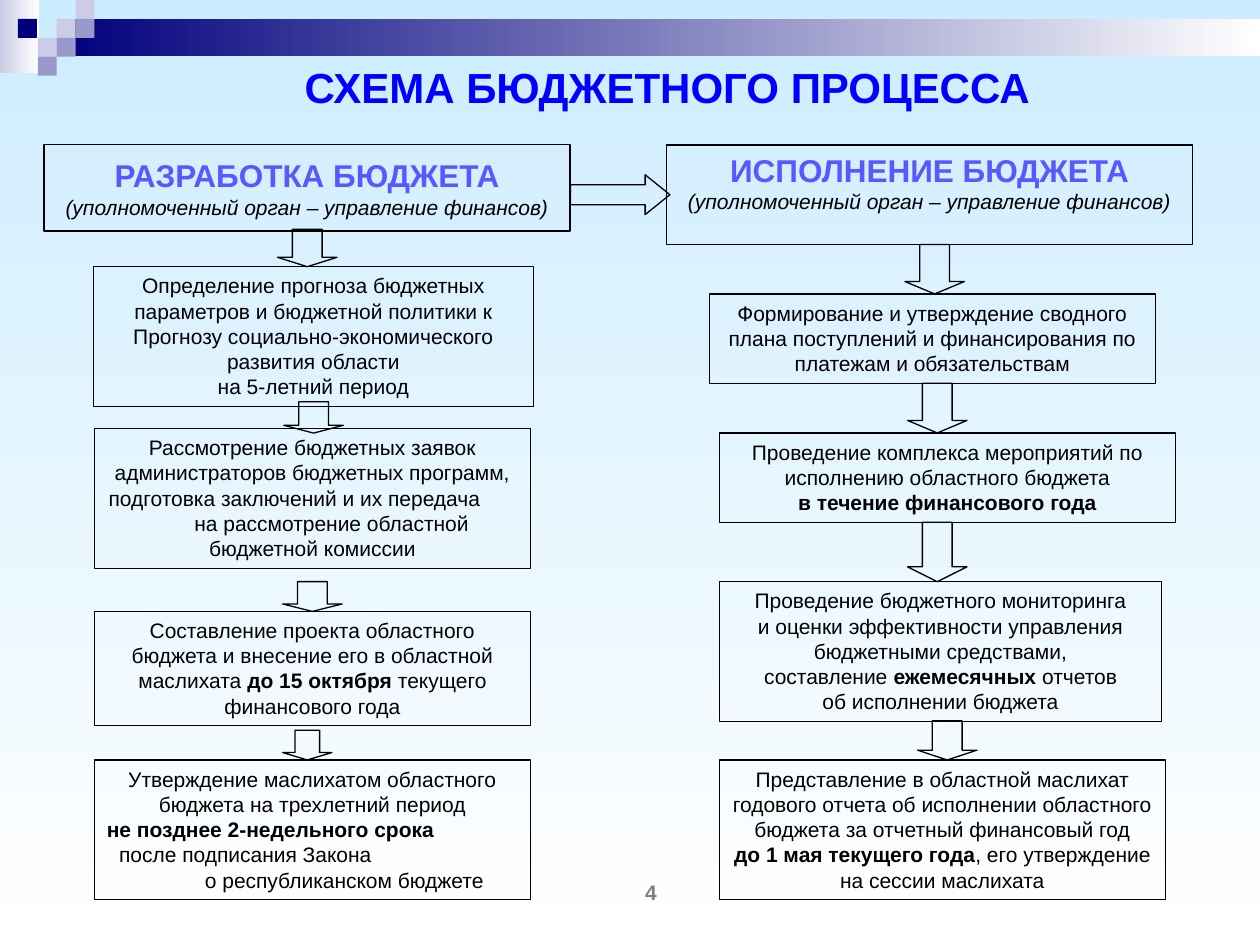
"""Build the budget process flowchart slide."""
from pptx import Presentation
from pptx.dml.color import RGBColor
from pptx.enum.shapes import MSO_SHAPE
from pptx.enum.text import MSO_ANCHOR, PP_ALIGN
from pptx.util import Pt

COLORS = {
    "sky": "CCECFF", "white": "FFFFFF", "navy": "00007D", "lilac": "CCCCE6",
    "violet": "9999CC", "title": "0000FF", "header": "5858FF",
    "black": "000000", "gray": "7F7F7F",
}
UNIT = 10.8

prs = Presentation()
prs.slide_width, prs.slide_height = Pt(720), Pt(540)
s = prs.slides.add_slide(prs.slide_layouts[6])


def add_shape(kind, box, fill=None, line=None):
    sp = s.shapes.add_shape(kind, *[Pt(v) for v in box])
    sp.shadow.inherit = False
    if fill:
        sp.fill.solid()
        sp.fill.fore_color.rgb = RGBColor.from_string(COLORS[fill])
    else:
        sp.fill.background()
    if line:
        sp.line.color.rgb = RGBColor.from_string(COLORS[line])
        sp.line.width = Pt(0.75)
    else:
        sp.line.fill.background()
    return sp


def add_run(p, text, size=12, color="black", bold=False, italic=False):
    r = p.add_run()
    r.text = text
    r.font.name = "Arial"
    r.font.size = Pt(size)
    r.font.bold = bold
    r.font.italic = italic
    r.font.color.rgb = RGBColor.from_string(COLORS[color])


bg = s.background.fill
bars = [
    ((0, 0, 22.3, 41.8), "lilac"),
    ((32.4, UNIT, 687.6, 21.4), "navy"),
]
gradients = [(bg, "sky", 270)]
for box, color in bars:
    gradients.append((add_shape(MSO_SHAPE.RECTANGLE, box, "white").fill, color, 0))
for fill, color, angle in gradients:
    fill.gradient()
    fill.gradient_angle = angle
    for stop, name in zip(fill.gradient_stops, (color, "white")):
        stop.color.rgb = RGBColor.from_string(COLORS[name])

squares = [
    (3, 1, "lilac"), (4, 0, "lilac"), (4, 1, "violet"), (2, 2, "lilac"),
    (0.95, 1, "navy"), (3, 2, "violet"), (2, 3, "violet"),
]
for col, row, color in squares:
    add_shape(MSO_SHAPE.RECTANGLE, (col * UNIT, row * UNIT, UNIT, UNIT), color)

labels = [
    ((99.4, 31.7, 563.8, 36), "СХЕМА БЮДЖЕТНОГО ПРОЦЕССА", 24, "title"),
    ((300, 492, 144, 36), "4", 12, "gray"),
]
for box, text, size, color in labels:
    tf = s.shapes.add_textbox(*[Pt(v) for v in box]).text_frame
    tf.word_wrap = True
    tf.vertical_anchor = MSO_ANCHOR.MIDDLE
    p = tf.paragraphs[0]
    p.alignment = PP_ALIGN.CENTER
    add_run(p, text, size, color, bold=True)

headers = [
    ((25.2, 82.8, 300.6, 49.2), "РАЗРАБОТКА БЮДЖЕТА", 0),
    ((380.9, 82.8, 300.6, 56.9), "ИСПОЛНЕНИЕ БЮДЖЕТА", 13.8),
]
for box, text, bottom in headers:
    tf = add_shape(MSO_SHAPE.RECTANGLE, box, line="black").text_frame
    tf.word_wrap = False
    tf.vertical_anchor = MSO_ANCHOR.MIDDLE
    tf.margin_left = tf.margin_right = tf.margin_top = 0
    tf.margin_bottom = Pt(bottom)
    p = tf.paragraphs[0]
    p.alignment = PP_ALIGN.CENTER
    add_run(p, text, 18, "header", bold=True)
    p = tf.add_paragraph()
    p.alignment = PP_ALIGN.CENTER
    add_run(p, "(уполномоченный орган – управление финансов)", italic=True)

CENTERED = None
steps = [
    ((53.4, 152.4, 251.4, 79.9), [
        (CENTERED, "Определение прогноза бюджетных параметров и бюджетной политики к "
                   "Прогнозу социально-экономического развития области"),
        (CENTERED, "на 5-летний период")]),
    ((54, 244.9, 249.1, 79.9), [
        (CENTERED, "Рассмотрение бюджетных заявок администраторов бюджетных программ,"),
        (1, "подготовка заключений и их передача"),
        (50, "на рассмотрение областной"),
        (CENTERED, "бюджетной комиссии")]),
    ((54, 349.4, 249.1, 65.2), [
        (CENTERED, "Составление проекта областного бюджета и внесение его в областной "
                   "маслихата *до 15 октября *текущего финансового года")]),
    ((54, 434.3, 249.1, 79.9), [
        (CENTERED, "Утверждение маслихатом областного бюджета на трехлетний период"),
        (0, "*не позднее 2-недельного срока"),
        (7, "после подписания Закона"),
        (56, "о республиканском бюджете")]),
    ((405.4, 168, 254.9, 51.1), [
        (CENTERED, "Формирование и утверждение сводного плана поступлений и "
                   "финансирования по платежам и обязательствам")]),
    ((411.1, 247.5, 260.6, 51.1), [
        (CENTERED, "Проведение комплекса мероприятий по исполнению областного бюджета"),
        (CENTERED, "*в течение финансового года")]),
    ((411.1, 332.4, 252.7, 79.9), [
        (CENTERED, "Проведение бюджетного мониторинга"),
        (CENTERED, "и оценки эффективности управления бюджетными средствами,"),
        (CENTERED, "составление *ежемесячных* отчетов"),
        (CENTERED, "об исполнении бюджета")]),
    ((411.1, 434.3, 254.9, 79.9), [
        (CENTERED, "Представление в областной маслихат годового отчета об исполнении "
                   "областного бюджета за отчетный финансовый год"),
        (CENTERED, "*до 1 мая текущего года*, его утверждение на сессии маслихата")]),
]
for box, paragraphs in steps:
    tf = add_shape(MSO_SHAPE.RECTANGLE, box, line="black").text_frame
    tf.word_wrap = True
    tf.vertical_anchor = MSO_ANCHOR.TOP
    for i, (indent, text) in enumerate(paragraphs):
        p = tf.add_paragraph() if i else tf.paragraphs[0]
        p.alignment = PP_ALIGN.CENTER if indent is CENTERED else PP_ALIGN.LEFT
        if indent:
            p._p.get_or_add_pPr().set("marL", str(Pt(indent)))
        for j, part in enumerate(text.split("*")):
            if part:
                add_run(p, part, bold=j % 2 == 1)

down_arrows = [
    (158.6, 131, 34, 21.4), (162.2, 229.6, 34, 17.9),
    (161.5, 332.4, 34, 17), (161.5, 417.3, 28.2, 17),
    (517.1, 139.7, 34, 28.3), (518.6, 219, 34, 28.4),
    (518.6, 298.4, 34, 34), (524.3, 411.9, 34, 22.4),
]
for box in down_arrows:
    sp = add_shape(MSO_SHAPE.DOWN_ARROW, box, line="black")
    sp.adjustments[0], sp.adjustments[1] = 0.5, 0.25

sp = add_shape(MSO_SHAPE.RIGHT_ARROW, (326, 99.9, 56.8, 22.8), line="black")
sp.adjustments[0], sp.adjustments[1] = 0.5, 0.62

prs.save("out.pptx")
